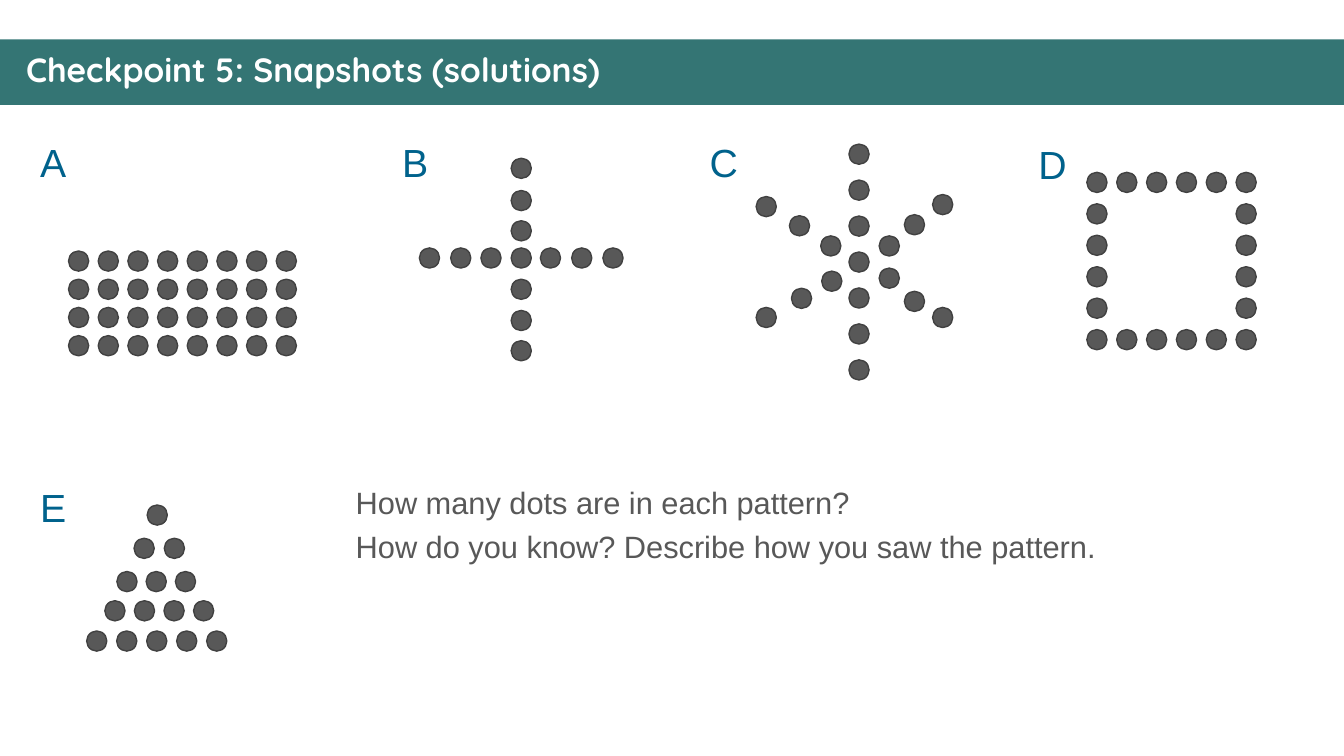
from pptx import Presentation
from pptx.dml.color import RGBColor
from pptx.enum.shapes import MSO_SHAPE
from pptx.util import Inches, Pt

OVAL = MSO_SHAPE.OVAL
RECTANGLE = MSO_SHAPE.RECTANGLE

TEAL = RGBColor(0x34, 0x75, 0x74)
WHITE = RGBColor(0xFF, 0xFF, 0xFF)
BLUE = RGBColor(0x00, 0x62, 0x8C)
GREY = RGBColor(0x58, 0x58, 0x58)
DARK_GREY = RGBColor(0x41, 0x41, 0x41)

DOT = 0.2

TITLE = "Checkpoint 5: Snapshots (solutions)"
QUESTIONS = [
    "How many dots are in each pattern?",
    "How do you know? Describe how you saw the pattern.",
]

# letter, left, top, width
LABELS = [
    ("A", 0.3, 1.32, 0.46),
    ("B", 3.89, 1.32, 0.46),
    ("C", 6.94, 1.32, 0.49),
    ("D", 10.2, 1.34, 0.49),
    ("E", 0.3, 4.75, 0.46),
]

CROSS_X = [4.16, 4.47, 4.77, 5.07, 5.36, 5.67, 5.98]
CROSS_Y = [1.57, 1.89, 2.19, 2.46, 2.77, 3.08, 3.38]
STAR_ARMS = [
    (7.5, 1.95), (7.83, 2.14), (8.14, 2.34),
    (7.5, 3.05), (7.85, 2.86), (8.15, 2.69),
    (9.25, 1.93), (8.97, 2.13), (8.72, 2.34),
    (9.25, 3.05), (8.97, 2.89), (8.72, 2.66),
]
# first left, last left, top; each row has one dot more than the row above
TRIANGLE_ROWS = [
    (1.46, 1.46, 5.01),
    (1.33, 1.63, 5.34),
    (1.16, 1.74, 5.67),
    (1.04, 1.92, 5.96),
    (0.86, 2.05, 6.26),
]


def spread(first, last, count):
    """Return count evenly spaced values from first to last."""
    step = (last - first) / max(count - 1, 1)
    return [first + i * step for i in range(count)]


def dot_patterns():
    """Return the dot corners of patterns A to E."""
    array = [(x, y) for y in spread(2.49, 3.33, 4)
             for x in spread(0.68, 2.74, 8)]
    mid_x, mid_y = CROSS_X[3], CROSS_Y[3]
    cross = [(mid_x, y) for y in CROSS_Y]
    cross += [(x, mid_y) for x in CROSS_X if x != mid_x]
    star = [(8.42, y) for y in spread(1.43, 3.57, 7)] + STAR_ARMS
    side_x, side_y = spread(10.78, 12.26, 6), spread(1.71, 3.27, 6)
    square = [(x, y) for y in side_y for x in side_x
              if x in (side_x[0], side_x[-1]) or y in (side_y[0], side_y[-1])]
    triangle = [(x, y) for n, (first, last, y) in enumerate(TRIANGLE_ROWS, 1)
                for x in spread(first, last, n)]
    return [array, cross, star, square, triangle]


def add_dots(slide, corners):
    group = slide.shapes.add_group_shape()
    for x, y in corners:
        sp = group.shapes.add_shape(OVAL, Inches(x), Inches(y),
                                    Inches(DOT), Inches(DOT))
        sp.shadow.inherit = False
        sp.fill.solid()
        sp.fill.fore_color.rgb = GREY
        sp.line.color.rgb = DARK_GREY
        sp.line.width = Pt(1)


def add_text(slide, box, lines, size, color, font="Arial", bold=False,
             wrap=True, gaps=(0,), spacing=1.0):
    """Add a text box; gaps are the points before each line."""
    tf = slide.shapes.add_textbox(*map(Inches, box)).text_frame
    tf.word_wrap = wrap
    tf.text = "\n".join(lines)
    for p, gap in zip(tf.paragraphs, gaps):
        p.space_before = Pt(gap)
        p.line_spacing = spacing
        r = p.runs[0]
        r.font.size = Pt(size)
        r.font.name = font
        r.font.bold = bold
        r.font.color.rgb = color


def main():
    prs = Presentation()
    prs.slide_width, prs.slide_height = Inches(13.33), Inches(7.5)
    slide = prs.slides.add_slide(prs.slide_layouts[6])

    band = slide.shapes.add_shape(RECTANGLE, 0, Inches(0.39),
                                  prs.slide_width, Inches(0.65))
    band.shadow.inherit = False
    band.fill.solid()
    band.fill.fore_color.rgb = TEAL
    band.line.fill.background()
    add_text(slide, (0.16, 0.48, 13.04, 0.47), [TITLE], 24, WHITE,
             font="Quicksand", bold=True, spacing=0.9)

    for corners in dot_patterns():
        add_dots(slide, corners)
    for letter, left, top, width in LABELS:
        add_text(slide, (left, top, width, 0.57), [letter], 28, BLUE,
                 wrap=False, gaps=(2,))
    add_text(slide, (3.43, 4.75, 8.11, 0.92), QUESTIONS, 22, GREY, gaps=(2, 5))

    prs.save("out.pptx")


if __name__ == "__main__":
    main()
